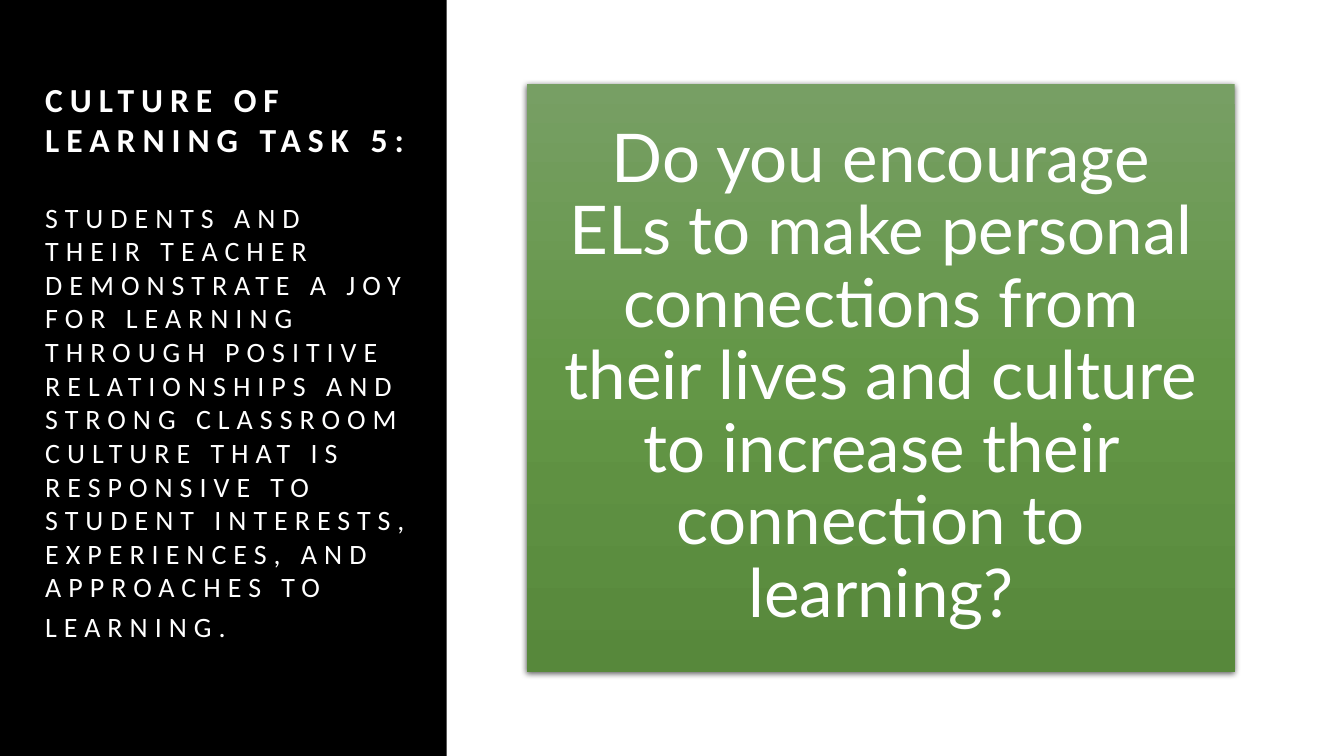
import pptx
import pptx.dml.color
import pptx.enum.shapes
import pptx.enum.text
import pptx.oxml
import pptx.oxml.ns
import pptx.util
from lxml import etree

Pt = pptx.util.Pt
RECTANGLE = pptx.enum.shapes.MSO_SHAPE.RECTANGLE
MIDDLE = pptx.enum.text.MSO_ANCHOR.MIDDLE
ALIGN = pptx.enum.text.PP_ALIGN

COLOURS = {
    "panel": "000000",
    "text": "FFFFFF",
    "card_top": "779F64",
    "card_middle": "639646",
    "card_bottom": "57883B",
    "shadow": "000000",
}


def rgb(name):
    return pptx.dml.color.RGBColor.from_string(COLOURS[name])


def add_span(para, text, font, size, bold=False, spacing=0):
    span = para.add_run()
    span.text = text
    span.font.name = font
    span.font.size = Pt(size)
    span.font.bold = bold
    span.font.color.rgb = rgb("text")
    if spacing:
        span.font._element.set("spc", str(spacing * 100))


def add_rectangle(page, left, top, width, height):
    shape = page.shapes.add_shape(RECTANGLE, Pt(left), Pt(top), Pt(width), Pt(height))
    shape.shadow.inherit = False
    shape.line.fill.background()
    return shape


def fill_card(card):
    """Give the card its three-stop gradient and soft shadow."""
    card.fill.gradient()
    card.fill.gradient_angle = 270
    properties = card._element.spPr
    stops = properties.find(".//" + pptx.oxml.ns.qn("a:gsLst"))
    for stop in list(stops):
        stops.remove(stop)
    for position, name in ((0, "card_top"), (50, "card_middle"), (100, "card_bottom")):
        stop = etree.SubElement(stops, pptx.oxml.ns.qn("a:gs"), pos=str(position * 1000))
        etree.SubElement(stop, pptx.oxml.ns.qn("a:srgbClr"), val=COLOURS[name])

    effects = properties.find(pptx.oxml.ns.qn("a:effectLst"))
    effects.append(pptx.oxml.parse_xml(
        f'<a:outerShdw {pptx.oxml.ns.nsdecls("a")} blurRad="{Pt(4.5)}" dist="{Pt(1.5)}"'
        f' dir="5400000" algn="ctr" rotWithShape="0"><a:srgbClr val="{COLOURS["shadow"]}">'
        '<a:alpha val="63000"/></a:srgbClr></a:outerShdw>'))


def add_task_panel(page, left, top, width, height):
    # Black side panel
    panel = add_rectangle(page, left, top, width, height)
    panel.fill.solid()
    panel.fill.fore_color.rgb = rgb("panel")

    # Task heading and description
    box = page.shapes.add_textbox(Pt(left + 25.2), Pt(top), Pt(279.4), Pt(height - 23.8))
    frame = box.text_frame
    frame.word_wrap = True
    frame.vertical_anchor = MIDDLE
    heading = frame.paragraphs[0]
    add_span(heading, "CULTURE OF LEARNING TASK 5:", "Calibri", 24, bold=True, spacing=5)
    description = frame.add_paragraph()
    description.space_before = Pt(29)
    add_span(description,
             "STUDENTS AND THEIR TEACHER DEMONSTRATE A JOY FOR LEARNING THROUGH "
             "POSITIVE RELATIONSHIPS AND STRONG CLASSROOM CULTURE THAT IS RESPONSIVE "
             "TO STUDENT INTERESTS, EXPERIENCES, AND APPROACHES TO LEARNING.",
             "Calibri", 20, spacing=5)
    add_span(description, " ", "Calibri", 24, spacing=5)


def add_question_card(page, left, top, width, height):
    # Green card with the question
    card = add_rectangle(page, left, top, width, height)
    fill_card(card)
    frame = card.text_frame
    frame.word_wrap = True
    frame.vertical_anchor = MIDDLE
    frame.margin_left = frame.margin_right = Pt(26.64)
    frame.margin_top = frame.margin_bottom = Pt(26.64)
    question = frame.paragraphs[0]
    question.alignment = ALIGN.CENTER
    question.line_spacing = 0.9
    add_span(question,
             "Do you encourage ELs to make personal connections from their lives and "
             "culture to increase their connection to learning?", "Lato", 48)


def main():
    deck = pptx.Presentation()
    deck.slide_width, deck.slide_height = Pt(960), Pt(540)
    page = deck.slides.add_slide(deck.slide_layouts[6])
    add_task_panel(page, 0, 0, 319, 540)
    add_question_card(page, 376.5, 60, 505.5, 420)
    deck.save("out.pptx")


if __name__ == "__main__":
    main()
